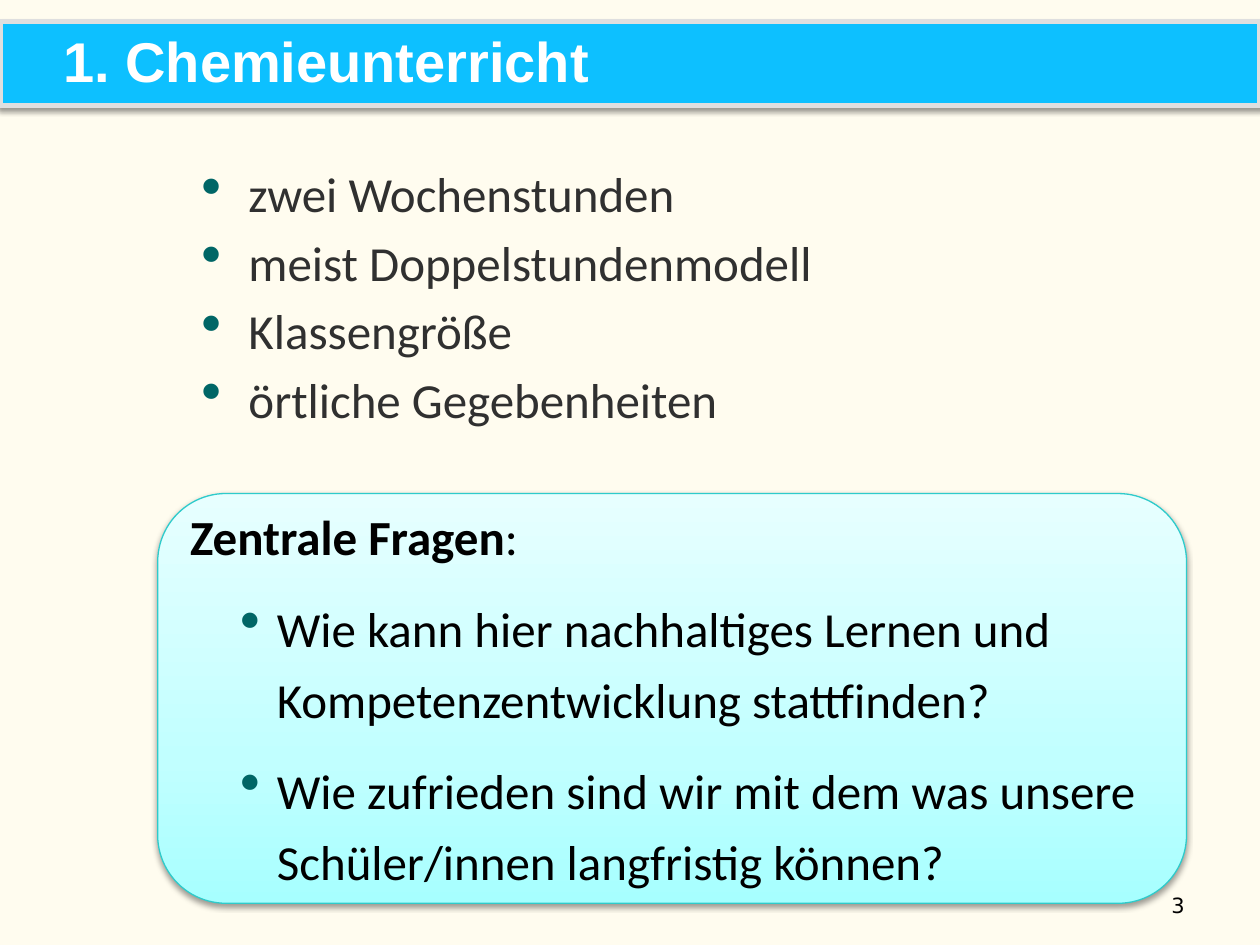
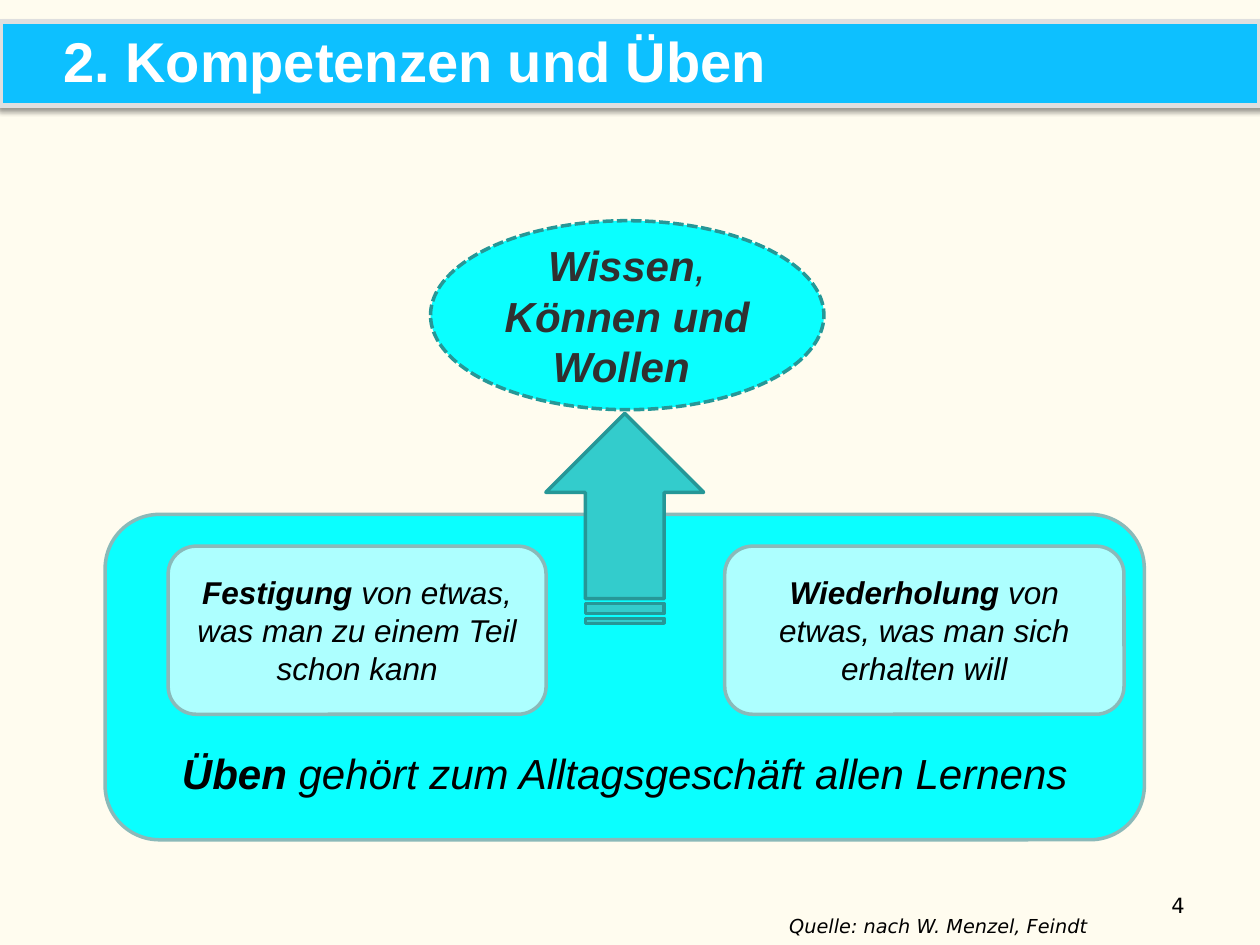
"""Build two slides on chemistry lessons, competences and practice."""
from copy import deepcopy
from dataclasses import dataclass

from lxml import etree
from pptx import Presentation
from pptx.dml.color import RGBColor
from pptx.enum.dml import MSO_LINE_DASH_STYLE
from pptx.enum.shapes import MSO_SHAPE
from pptx.enum.text import MSO_ANCHOR, MSO_AUTO_SIZE, PP_ALIGN
from pptx.oxml.ns import qn
from pptx.util import Cm, Pt

ROUNDED = MSO_SHAPE.ROUNDED_RECTANGLE
ELLIPSE = MSO_SHAPE.OVAL
STRIPED_ARROW = MSO_SHAPE.STRIPED_RIGHT_ARROW
DASHED = MSO_LINE_DASH_STYLE.SQUARE_DOT
TOP, MIDDLE, BOTTOM = MSO_ANCHOR.TOP, MSO_ANCHOR.MIDDLE, MSO_ANCHOR.BOTTOM
LEFT, CENTER, RIGHT = PP_ALIGN.LEFT, PP_ALIGN.CENTER, PP_ALIGN.RIGHT
TITLE_ONLY = 5


@dataclass(frozen=True)
class Theme:
    """Colours, fonts and type sizes of the slides."""
    paper: str = "FFFCEF"
    band: str = "0DC0FF"
    band_edge: str = "DFDFDF"
    white: str = "FFFFFF"
    black: str = "000000"
    ink: str = "303030"
    bullet: str = "006666"
    cyan: str = "0AFFFF"
    pale_cyan: str = "ADFFFF"
    teal: str = "33CCCC"
    teal_edge: str = "269797"
    grey_edge: str = "8AB9B9"
    question_edge: str = "2ECBCB"
    question_fade: tuple = ((0, "A7FFFF"), (0.35, "C1FFFF"), (1, "E7FFFF"))
    heading_font: str = "Arial"
    body_font: str = "Calibri"
    small_font: str = "DejaVu Sans"
    title_size: int = 32
    body_size: int = 28
    key_size: int = 24
    note_size: int = 18
    number_size: int = 12
    source_size: int = 11


class Deck:
    """Hold the theme and the current slide and draw its elements."""

    def __init__(self, theme):
        """Start an empty presentation with the shared background."""
        self.theme = theme
        self.presentation = Presentation()
        self.presentation.slide_width = Cm(25.4)
        self.presentation.slide_height = Cm(19.05)
        self.paint(self.presentation.slide_master.background.fill, theme.paper)
        self.slide = None

    @staticmethod
    def paint(fill, color):
        """Fill with one solid colour."""
        fill.solid()
        fill.fore_color.rgb = RGBColor.from_string(color)

    def outline(self, shape, color, width):
        """Give a shape a solid line and no inherited shadow."""
        self.paint(shape.line.fill, color)
        shape.line.width = Pt(width)
        shape.shadow.inherit = False

    def cast_shadow(self, shape):
        """Add a soft shadow below a shape."""
        effects = shape._element.spPr.find(qn("a:effectLst"))
        shadow = etree.SubElement(effects, qn("a:outerShdw"), blurRad=str(Pt(3.1)),
                                  dist=str(Pt(1.6)), dir="5400000", rotWithShape="0")
        color = etree.SubElement(shadow, qn("a:srgbClr"), val=self.theme.black)
        etree.SubElement(color, qn("a:alpha"), val="38000")

    def fade(self, shape, stops):
        """Fill a shape with a three-stop gradient rising from the bottom."""
        shape.fill.gradient()
        shape.fill.gradient_angle = 90
        stop_list = shape._element.spPr.find(qn("a:gradFill")).find(qn("a:gsLst"))
        stop_list.append(deepcopy(stop_list[-1]))
        for stop, (position, color) in zip(shape.fill.gradient_stops, stops):
            stop.position = position
            stop.color.rgb = RGBColor.from_string(color)

    def add_slide(self, title, number):
        """Add a slide with its title band and slide number."""
        theme = self.theme
        layout = self.presentation.slide_layouts[TITLE_ONLY]
        self.slide = self.presentation.slides.add_slide(layout)
        band = self.slide.shapes.title
        band.left, band.top, band.width, band.height = Cm(0), Cm(0.43), Cm(25.4), Cm(1.7)
        self.paint(band.fill, theme.band)
        self.outline(band, theme.band_edge, 3)
        self.cast_shadow(band)
        frame = band.text_frame
        frame.auto_size = MSO_AUTO_SIZE.NONE
        frame.vertical_anchor = TOP
        frame.margin_top, frame.margin_bottom = Cm(0.1), Cm(0.13)
        self.add_text(band, [(title, True)], theme.heading_font, theme.title_size,
                      theme.white, margin=1.02)
        self.text_box(18.21, 17.35, 5.92, 1.27, number, theme.number_size,
                      align=RIGHT, anchor=BOTTOM)

    def add_text(self, shape, runs, font, size, color, align=LEFT, italic=False,
                 margin=0, hanging=0, bullet=False, before=0, spacing=None):
        """Append one paragraph of (text, bold) runs to a shape."""
        frame = shape.text_frame
        paragraph = frame.paragraphs[0]
        if paragraph.runs:
            paragraph = frame.add_paragraph()
        paragraph.alignment = align
        properties = paragraph._p.get_or_add_pPr()
        properties.set("marL", str(Cm(margin)))
        properties.set("indent", str(-Cm(hanging)))
        if bullet:
            bullet_color = etree.SubElement(properties, qn("a:buClr"))
            etree.SubElement(bullet_color, qn("a:srgbClr"), val=self.theme.bullet)
            etree.SubElement(properties, qn("a:buSzPct"), val="120000")
            etree.SubElement(properties, qn("a:buChar"), char="•")
        paragraph.space_before = Pt(before)
        if spacing:
            paragraph.line_spacing = spacing
        paragraph.font.name = font
        paragraph.font.size = Pt(size)
        paragraph.font.italic = italic
        paragraph.font.color.rgb = RGBColor.from_string(color)
        for text, bold in runs:
            run = paragraph.add_run()
            run.text = text
            run.font.bold = bold

    def text_box(self, left, top, width, height, text, size, align=LEFT,
                 anchor=TOP, italic=False):
        """Add a one-line text box in the small font."""
        box = self.slide.shapes.add_textbox(Cm(left), Cm(top), Cm(width), Cm(height))
        box.text_frame.word_wrap = True
        box.text_frame.vertical_anchor = anchor
        self.add_text(box, [(text, False)], self.theme.small_font, size,
                      self.theme.black, align, italic)

    def bullet_list(self, left, top, width, height, items):
        """Add a list of bulleted lines."""
        theme = self.theme
        box = self.slide.shapes.add_textbox(Cm(left), Cm(top), Cm(width), Cm(height))
        box.text_frame.word_wrap = True
        for item in items:
            self.add_text(box, [(item, False)], theme.body_font, theme.body_size, theme.ink,
                          margin=0.95, hanging=0.95, bullet=True, before=5.5)

    def panel(self, kind, left, top, width, height, fill, edge, line_width=2):
        """Add a filled and outlined preset shape."""
        shape = self.slide.shapes.add_shape(kind, Cm(left), Cm(top), Cm(width), Cm(height))
        self.paint(shape.fill, fill)
        self.outline(shape, edge, line_width)
        shape.text_frame.word_wrap = True
        shape.text_frame.vertical_anchor = MIDDLE
        return shape

    def question_panel(self, left, top, width, height, heading, questions):
        """Add the shaded panel with a heading and bulleted questions."""
        theme = self.theme
        shape = self.panel(ROUNDED, left, top, width, height, theme.white,
                           theme.question_edge, 0.75)
        self.fade(shape, theme.question_fade)
        self.cast_shadow(shape)
        style = (theme.body_font, theme.body_size, theme.black)
        self.add_text(shape, [(heading, True), (":", False)], *style,
                      margin=0.95, hanging=0.95, before=5.5)
        for question in questions:
            self.add_text(shape, [(question, False)], *style, margin=1.75, hanging=0.74,
                          bullet=True, before=12, spacing=1.2)

    def statement(self, shape, runs, size, color):
        """Set a centred italic statement into a shape."""
        self.add_text(shape, runs, self.theme.heading_font, size, color, CENTER, italic=True)


def build_lessons(deck):
    """Build the slide on chemistry lessons."""
    deck.add_slide("1. Chemieunterricht", "3")
    deck.bullet_list(3.81, 3.18, 14.6, 5.72, [
        "zwei Wochenstunden",
        "meist Doppelstundenmodell",
        "Klassengröße",
        "örtliche Gegebenheiten",
    ])
    deck.question_panel(3.18, 9.95, 20.74, 8.26, "Zentrale Fragen", [
        "Wie kann hier nachhaltiges Lernen und Kompetenzentwicklung stattfinden?",
        "Wie zufrieden sind wir mit dem was unsere Schüler/innen langfristig können?",
    ])


def build_practice(deck):
    """Build the slide on competences and practice."""
    theme = deck.theme
    deck.add_slide("2. Kompetenzen und Üben", "4")

    goal = deck.panel(ELLIPSE, 8.68, 4.45, 7.93, 3.81, theme.cyan, theme.teal_edge)
    goal.line.dash_style = DASHED
    deck.statement(goal, [("Wissen", True), (", ", False), ("Können und Wollen ", True)],
                   theme.key_size, theme.ink)

    practice = deck.panel(ROUNDED, 2.12, 10.37, 20.95, 6.56, theme.cyan, theme.grey_edge)
    practice.text_frame.vertical_anchor = BOTTOM
    practice.text_frame.margin_bottom = Cm(0.53)
    deck.statement(practice, [("Üben", True),
                              (" gehört zum Alltagsgeschäft allen Lernens", False)],
                   theme.key_size, theme.black)

    forms = [
        (3.39, 7.62, "Festigung ", "von etwas, was man zu einem Teil schon kann"),
        (14.61, 8.05, "Wiederholung ", "von etwas, was man sich erhalten will"),
    ]
    for left, width, term, meaning in forms:
        form = deck.panel(ROUNDED, left, 11.01, width, 3.39, theme.pale_cyan, theme.grey_edge)
        deck.statement(form, [(term, True), (meaning, False)], theme.note_size, theme.black)

    arrow = deck.panel(STRIPED_ARROW, 10.48, 8.86, 4.23, 3.18, theme.teal, theme.teal_edge)
    arrow.rotation = 270
    deck.text_box(15.66, 18.31, 6.66, 0.74, "Quelle: nach W. Menzel, Feindt",
                  theme.source_size, italic=True)


def main():
    """Build and save the presentation."""
    deck = Deck(Theme())
    build_lessons(deck)
    build_practice(deck)
    deck.presentation.save("out.pptx")


if __name__ == "__main__":
    main()
